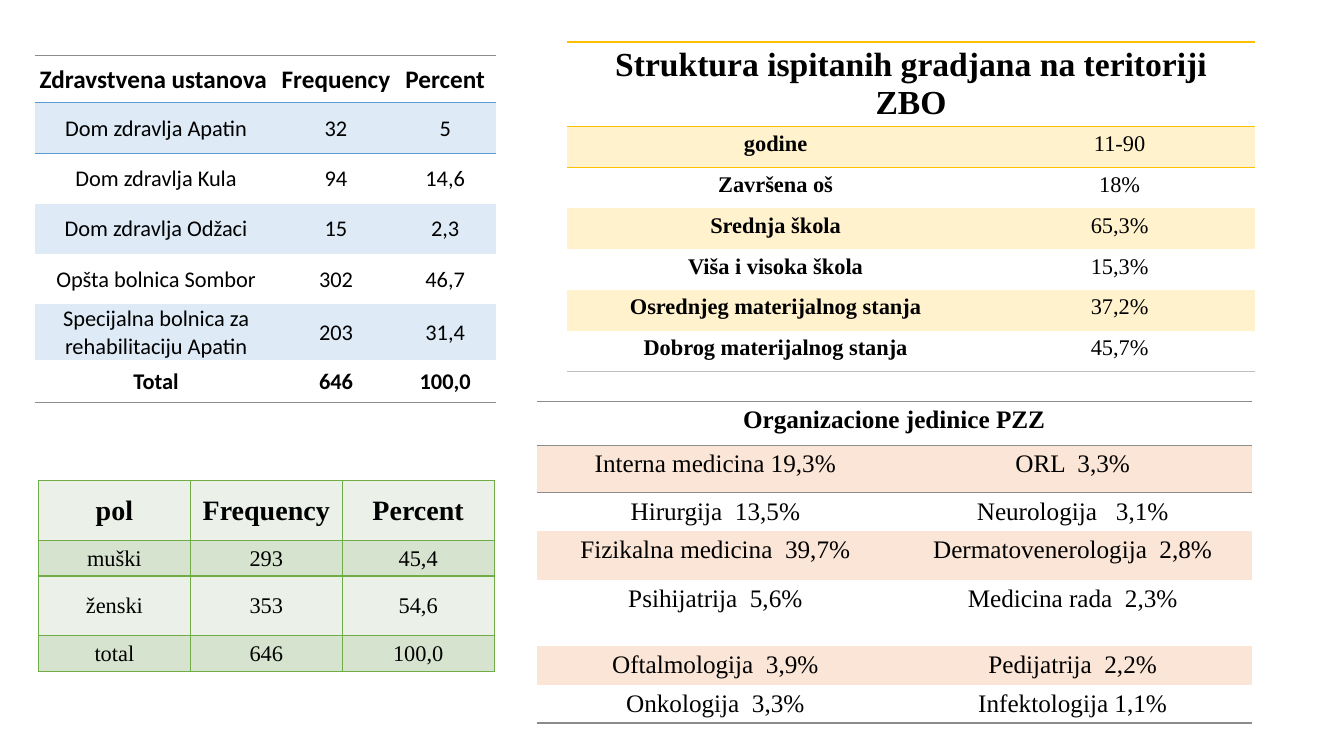
from dataclasses import dataclass

from lxml import etree
from pptx import Presentation
from pptx.dml.color import RGBColor
from pptx.enum.text import MSO_ANCHOR, PP_ALIGN
from pptx.oxml.ns import qn
from pptx.util import Pt

CENTER = PP_ALIGN.CENTER
MIDDLE, TOP = MSO_ANCHOR.MIDDLE, MSO_ANCHOR.TOP
PLAIN_STYLE = "{2D5ABB26-0587-4C30-8999-92F81FD0307C}"


@dataclass(frozen=True)
class Theme:
    sans: str = "Calibri"
    serif: str = "Times New Roman"
    text: str = "000000"
    gray: str = "8C8C8C"
    light_gray: str = "BFBFBF"
    blue: str = "5B9BD5"
    blue_band: str = "DEEBF7"
    green: str = "70AD47"
    green_band: str = "D5E3CF"
    green_pale: str = "EBF1E9"
    gold: str = "FFC000"
    gold_band: str = "FFF2CC"
    orange_band: str = "FBE5D6"
    body: int = 16
    heading: int = 18
    large_heading: int = 20
    title: int = 24
    rule: float = 1


THEME = Theme()
TIGHT = {"margin_left": Pt(0.7), "margin_right": Pt(0.7), "margin_top": Pt(0.7),
         "margin_bottom": Pt(0), "vertical_anchor": MIDDLE}
ROOMY = {"margin_left": Pt(7.2), "margin_right": Pt(7.2), "margin_top": Pt(3.6),
         "margin_bottom": Pt(3.6), "vertical_anchor": TOP}


def apply_format(target, values):
    for name, value in values.items():
        setattr(target, name, value)


def draw_border(cell, side, color):
    properties = cell._tc.get_or_add_tcPr()
    line = etree.SubElement(properties, qn(f"a:ln{side}"), w=str(Pt(THEME.rule)))
    fill = etree.SubElement(line, qn("a:solidFill"))
    etree.SubElement(fill, qn("a:srgbClr"), val=color)


def format_cell(cell, text, font_values, cell_values, borders, fill):
    for side in "LRTB":
        if side in borders:
            draw_border(cell, side, borders[side])
    if fill:
        cell.fill.solid()
        cell.fill.fore_color.rgb = RGBColor.from_string(fill)
    else:
        cell.fill.background()
    apply_format(cell, cell_values)
    paragraph = cell.text_frame.paragraphs[0]
    paragraph.alignment = CENTER
    run = paragraph.add_run()
    run.text = text
    apply_format(run.font, font_values)
    run.font.color.rgb = RGBColor.from_string(THEME.text)


def add_data_table(slide, left, top, columns, heights, rows, font, sizes, cell_values,
                   bands, borders_for, is_bold):
    frame = slide.shapes.add_table(len(rows), len(columns), Pt(left), Pt(top),
                                   Pt(sum(columns)), Pt(sum(heights)))
    table = frame.table
    table._tbl.tblPr.find(qn("a:tableStyleId")).text = PLAIN_STYLE
    for column, width in zip(table.columns, columns):
        column.width = Pt(width)
    for row, height in zip(table.rows, heights):
        row.height = Pt(height)
    if len(rows[0]) == 1:
        table.cell(0, 0).merge(table.cell(0, len(columns) - 1))
    for row_index, values in enumerate(rows):
        size = sizes[0] if row_index == 0 else sizes[1]
        for column_index, text in enumerate(values):
            font_values = {"name": font, "size": Pt(size),
                           "bold": is_bold(row_index, column_index)}
            format_cell(table.cell(row_index, column_index), text, font_values,
                        cell_values, borders_for(row_index), bands[row_index % 2])


def ruled(last_row, top, header, bottom):
    rules = {0: {"T": top, "B": header}, 1: {"T": header}, last_row: {"B": bottom}}
    return lambda row: rules.get(row, {})


def add_institutions(slide, left, top):
    rows = [
        ("Zdravstvena ustanova ", "Frequency", "Percent"),
        ("Dom zdravlja Apatin", "32", "5"),
        ("Dom zdravlja Kula", "94", "14,6"),
        ("Dom zdravlja Odžaci", "15", "2,3"),
        ("Opšta bolnica Sombor", "302", "46,7"),
        ("Specijalna bolnica za rehabilitaciju Apatin", "203", "31,4"),
        ("Total", "646", "100,0"),
    ]
    add_data_table(slide, left, top, (173, 84, 72), [34] + [36] * 4 + [40, 30], rows,
                   THEME.sans, (THEME.heading, THEME.body), TIGHT,
                   (None, THEME.blue_band),
                   ruled(6, THEME.gray, THEME.blue, THEME.gray),
                   lambda row, column: row in (0, 6))


def add_gender(slide, left, top):
    rows = [
        ("pol", "Frequency", "Percent"),
        ("muški", "293", "45,4"),
        ("ženski", "353", "54,6"),
        ("total", "646", "100,0"),
    ]
    add_data_table(slide, left, top, [108.5] * 3, [42.5, 25.5] * 2, rows,
                   THEME.serif, (THEME.large_heading, THEME.body), TIGHT,
                   (THEME.green_pale, THEME.green_band),
                   lambda row: dict.fromkeys("LRTB", THEME.green),
                   lambda row, column: row == 0)


def add_citizens(slide, left, top):
    rows = [
        ("Struktura ispitanih gradjana na teritoriji ZBO",),
        ("godine", "11-90"),
        ("Završena oš", "18%"),
        ("Srednja škola", "65,3%"),
        ("Viša i visoka škola", "15,3%"),
        ("Osrednjeg materijalnog stanja", "37,2%"),
        ("Dobrog materijalnog stanja", "45,7%"),
    ]
    add_data_table(slide, left, top, (298, 193.5), [60] + [29.2] * 6, rows,
                   THEME.serif, (THEME.title, THEME.body), ROOMY,
                   (None, THEME.gold_band),
                   ruled(6, THEME.gold, THEME.gold, THEME.light_gray),
                   lambda row, column: column == 0)


def add_departments(slide, left, top):
    rows = [
        ("Organizacione jedinice PZZ",),
        ("Interna medicina 19,3%", "ORL  3,3%"),
        ("Hirurgija  13,5%", "Neurologija   3,1%"),
        ("Fizikalna medicina  39,7%", "Dermatovenerologija  2,8%"),
        ("Psihijatrija  5,6%", "Medicina rada  2,3%"),
        ("Oftalmologija  3,9%", "Pedijatrija  2,2%"),
        ("Onkologija  3,3%", "Infektologija 1,1%"),
    ]
    add_data_table(slide, left, top, (255, 255.5), (31.5, 34, 27.5, 35, 47, 27.5, 27.5),
                   rows, THEME.serif, (THEME.heading, THEME.heading), ROOMY,
                   (None, THEME.orange_band),
                   ruled(6, THEME.gray, THEME.gray, THEME.gray),
                   lambda row, column: row == 0)


def main():
    presentation = Presentation()
    apply_format(presentation, {"slide_width": Pt(960), "slide_height": Pt(540)})
    slide = presentation.slides.add_slide(presentation.slide_layouts[6])
    add_institutions(slide, 25, 39.5)
    add_gender(slide, 27.5, 343.5)
    add_citizens(slide, 405, 30)
    add_departments(slide, 383.5, 286.5)
    presentation.save("out.pptx")


if __name__ == "__main__":
    main()
